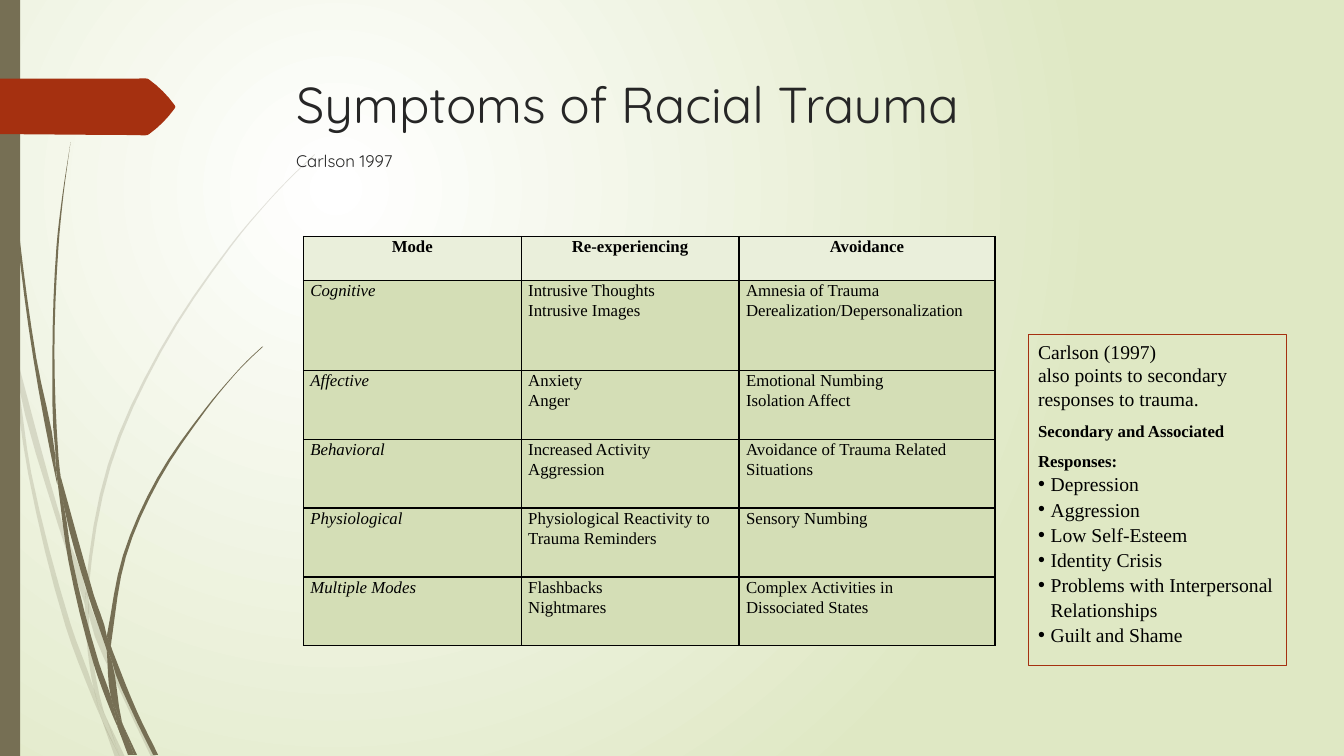
from lxml import etree
from pptx import Presentation
from pptx.dml.color import RGBColor
from pptx.enum.shapes import MSO_SHAPE
from pptx.enum.text import MSO_ANCHOR, PP_ALIGN
from pptx.oxml.ns import qn
from pptx.util import Pt

RECT = MSO_SHAPE.RECTANGLE
TOP = MSO_ANCHOR.TOP
LEFT, CENTER = PP_ALIGN.LEFT, PP_ALIGN.CENTER
WHITE = RGBColor(0xFF, 0xFF, 0xFF)
BLACK = RGBColor(0, 0, 0)
INK = RGBColor(0x26, 0x26, 0x26)
SAGE = RGBColor(0xDF, 0xE8, 0xC4)
PALE = RGBColor(0xEA, 0xEF, 0xDB)
GREEN = RGBColor(0xD4, 0xDE, 0xB6)
OLIVE = RGBColor(0x76, 0x6F, 0x54)
RUST = RGBColor(0xA5, 0x30, 0x10)
SERIF, SANS = "Times New Roman", "Quicksand"


def write(para, text, color, font, form):
    run = para.add_run()
    run.text = text
    run.font.name = font
    run.font.color.rgb = color
    for key, value in form.items():
        setattr(run.font, key, value)


def outline(knots, color, alpha):
    pts = [complex(*knot) * 72 for knot in knots]
    count = len(pts)
    steps = [pts[(i + 1) % count] - pts[i] for i in range(count)]
    dirs = [step / abs(step) for step in steps]
    line = []
    for i, step in enumerate(steps):
        ends = []
        for a, b in ((i - 1, i), (i, (i + 1) % count)):
            turn = dirs[a] + dirs[b]
            ends.append(turn / abs(turn) if abs(turn) > 1.94 else dirs[i])
        a, d = pts[i], pts[(i + 1) % count]
        b, c = a + ends[0] * abs(step) / 3, d - ends[1] * abs(step) / 3
        for t in (0.25, 0.5, 0.75, 1):
            s = 1 - t
            p = a * s**3 + 3 * b * s * s * t + 3 * c * s * t * t + d * t**3
            line.append((p.real, p.imag))
    form = slide.shapes.build_freeform(pts[0].real, pts[0].imag, scale=Pt(0.01))
    form.add_line_segments(line, close=True)
    shape = form.convert_to_shape()
    shape.shadow.inherit = False
    shape.fill.solid()
    shape.fill.fore_color.rgb = color
    shape.line.fill.background()
    if alpha < 100:
        tint = shape.element.spPr.find(".//" + qn("a:srgbClr"))
        etree.SubElement(tint, qn("a:alpha"), val=str(alpha * 1000))


deck = Presentation()
deck.slide_width, deck.slide_height = Pt(960), Pt(540)
slide = deck.slides.add_slide(deck.slide_layouts[6])

back = slide.background.fill
back.gradient()
for stop, color, place in zip(back.gradient_stops, (WHITE, SAGE), (0, 1)):
    stop.color.rgb = color
    stop.position = place
grad = slide.element.find(".//" + qn("a:gradFill"))
grad.remove(grad.find(qn("a:lin")))
ring = etree.SubElement(grad, qn("a:path"), path="circle")
etree.SubElement(ring, qn("a:fillToRect"), l="50000", t="50000", r="100000", b="100000")

bar = slide.shapes.add_shape(RECT, 0, 0, Pt(14.4), Pt(540))
bar.shadow.inherit = False
bar.fill.solid()
bar.fill.fore_color.rgb = OLIVE
bar.line.fill.background()

FAINT = [
    [(11, 350), (9, 322), (0, 282), (0, 299), (10, 344)],
    [(58, 522), (84, 599), (85, 586), (62, 520), (14, 345), (17, 376)],
    [(92, 607), (88, 596), (88, 610), (123, 694), (150, 751), (155, 751), (127, 692)],
    [(119, 751), (124, 751), (105, 711)],
    [(93, 683), (70, 619), (31, 469), (17, 376), (11, 350), (28, 470), (65, 621),
     (92, 693), (101, 714), (99, 707)],
    [(84, 599), (87, 646), (93, 683), (96, 692), (105, 711), (103, 706), (91, 646),
     (88, 610), (88, 608)],
    [(88, 584), (110, 462), (160, 349), (229, 245), (268, 198), (290, 175), (312, 154),
     (312, 153), (289, 175), (268, 197), (228, 244), (158, 348), (107, 461), (85, 584),
     (85, 586), (88, 596)],
    [(101, 714), (114, 751), (119, 751)],
    [(88, 608), (88, 610), (88, 596), (85, 586), (84, 599)],
    [(96, 692), (93, 683), (99, 707), (101, 714), (119, 751), (105, 711)],
]
DARK = [
    [(7, 110), (17, 233), (33, 355), (56, 477), (57, 481), (55, 457), (55, 453),
     (36, 355), (19, 232), (8, 109), (5, 48), (4, 0), (3, 0), (4, 48)],
    [(88, 592), (106, 645), (106, 633), (106, 631), (93, 590), (60, 472), (64, 505)],
    [(113, 649), (110, 641), (111, 656), (132, 708), (152, 749), (157, 749), (136, 706)],
    [(110, 691), (98, 657), (72, 556), (64, 505), (57, 477), (68, 557), (93, 659),
     (111, 708), (117, 722), (116, 717)],
    [(60, 472), (58, 453), (54, 349), (58, 245), (63, 193), (70, 141), (62, 193),
     (56, 245), (52, 349), (55, 449)],
    [(133, 749), (136, 749), (122, 719)],
    [(57, 477), (64, 505), (60, 472), (55, 449), (55, 453)],
    [(111, 633), (125, 552), (158, 476), (205, 406), (231, 374), (245, 359), (261, 344),
     (260, 344), (245, 358), (231, 373), (204, 405), (156, 474), (122, 551), (106, 631),
     (110, 641)],
    [(117, 722), (127, 749), (131, 749)],
    [(106, 645), (110, 691), (116, 706), (122, 719), (121, 716), (111, 656), (109, 651)],
    [(106, 645), (109, 651), (111, 656), (110, 641), (106, 631), (106, 633)],
    [(116, 706), (110, 691), (116, 717), (117, 722), (130, 749), (133, 749), (122, 719)],
]
ARROW = [
    [(173, 108), (148, 133), (146, 134), (136, 134), (0, 133), (0, 78), (136, 78),
     (146, 78), (148, 79), (173, 104), (174, 106)],
]
for group, color, alpha in ((FAINT, OLIVE, 20), (DARK, OLIVE, 100), (ARROW, RUST, 100)):
    for knots in group:
        outline(knots, color, alpha)

side = slide.shapes.add_shape(RECT, Pt(734.4), Pt(239), Pt(184.6), Pt(236.2))
side.shadow.inherit = False
side.fill.background()
side.line.color.rgb = RUST
side.line.width = Pt(0.75)
frame = side.text_frame
frame.word_wrap = True
frame.vertical_anchor = TOP
BODY = {"size": Pt(14)}
HEAD = {"size": Pt(12), "bold": True}
NOTES = [
    ("Carlson (1997)", BODY, 1.0, False),
    ("also points to secondary responses to trauma.", BODY, 1.0, False),
    ("Secondary and Associated Responses:", HEAD, 1.5, False),
    ("Depression", BODY, 1.07, True),
    ("Aggression", BODY, 1.07, True),
    ("Low Self-Esteem", BODY, 1.07, True),
    ("Identity Crisis", BODY, 1.07, True),
    ("Problems with Interpersonal Relationships", BODY, 1.07, True),
    ("Guilt and Shame", BODY, 1.07, True),
]
for i, (text, form, space, dot) in enumerate(NOTES):
    para = frame.add_paragraph() if i else frame.paragraphs[0]
    para.alignment = LEFT
    para.line_spacing = space
    write(para, text, BLACK, SERIF, form)
    if dot:
        props = para._p.get_or_add_pPr()
        props.set("marL", str(Pt(9)))
        props.set("indent", str(-Pt(9)))
        etree.SubElement(props, qn("a:buFont"), typeface="Arial")
        etree.SubElement(props, qn("a:buChar"), char="•")
para.space_after = Pt(8)

title = slide.shapes.add_textbox(Pt(204.5), Pt(49), Pt(702), Pt(100.8)).text_frame
title.word_wrap = True
write(title.paragraphs[0], "Symptoms of Racial Trauma", INK, SANS, {"size": Pt(36)})
para = title.add_paragraph()
para.space_before = Pt(12)
write(para, "Carlson 1997", INK, SANS, {"size": Pt(12)})

ROWS = [
    ("Mode", "Re-experiencing", "Avoidance"),
    ("Cognitive", "Intrusive Thoughts\nIntrusive Images",
     "Amnesia of Trauma\nDerealization/Depersonalization"),
    ("Affective", "Anxiety\nAnger", "Emotional Numbing\nIsolation Affect"),
    ("Behavioral", "Increased Activity\nAggression",
     "Avoidance of Trauma Related\nSituations"),
    ("Physiological", "Physiological Reactivity to\nTrauma Reminders", "Sensory Numbing"),
    ("Multiple Modes", "Flashbacks\nNightmares",
     "Complex Activities in\nDissociated States"),
]
WIDE = (155.6, 155.6, 182.8)
HIGH = (31.5, 64.2, 49.2, 49.2, 49.2, 49.2)
MARGIN = {"margin_left": Pt(5), "margin_right": Pt(5), "margin_top": 0, "margin_bottom": 0}
table = slide.shapes.add_table(
    len(HIGH), len(WIDE), Pt(216.7), Pt(168.9), Pt(sum(WIDE)), Pt(sum(HIGH))).table
table.horz_banding = False
for col, width in zip(table.columns, WIDE):
    col.width = Pt(width)
for r, row in enumerate(ROWS):
    table.rows[r].height = Pt(HIGH[r])
    for c, text in enumerate(row):
        cell = table.cell(r, c)
        for key, value in MARGIN.items():
            setattr(cell, key, value)
        cell.fill.solid()
        cell.fill.fore_color.rgb = GREEN if r else PALE
        form = {"size": Pt(12), "bold": r == 0, "italic": r > 0 and c == 0}
        for i, part in enumerate(text.split("\n")):
            para = cell.text_frame.add_paragraph() if i else cell.text_frame.paragraphs[0]
            para.alignment = LEFT if r else CENTER
            para.line_spacing = 1.07
            write(para, part, BLACK, SERIF, form)
        props = cell._tc.get_or_add_tcPr()
        for i, edge in enumerate(("a:lnL", "a:lnR", "a:lnT", "a:lnB")):
            line = etree.Element(qn(edge), w=str(Pt(1)))
            fill = etree.SubElement(line, qn("a:solidFill"))
            etree.SubElement(fill, qn("a:srgbClr"), val=str(BLACK))
            props.insert(i, line)

deck.save("out.pptx")
